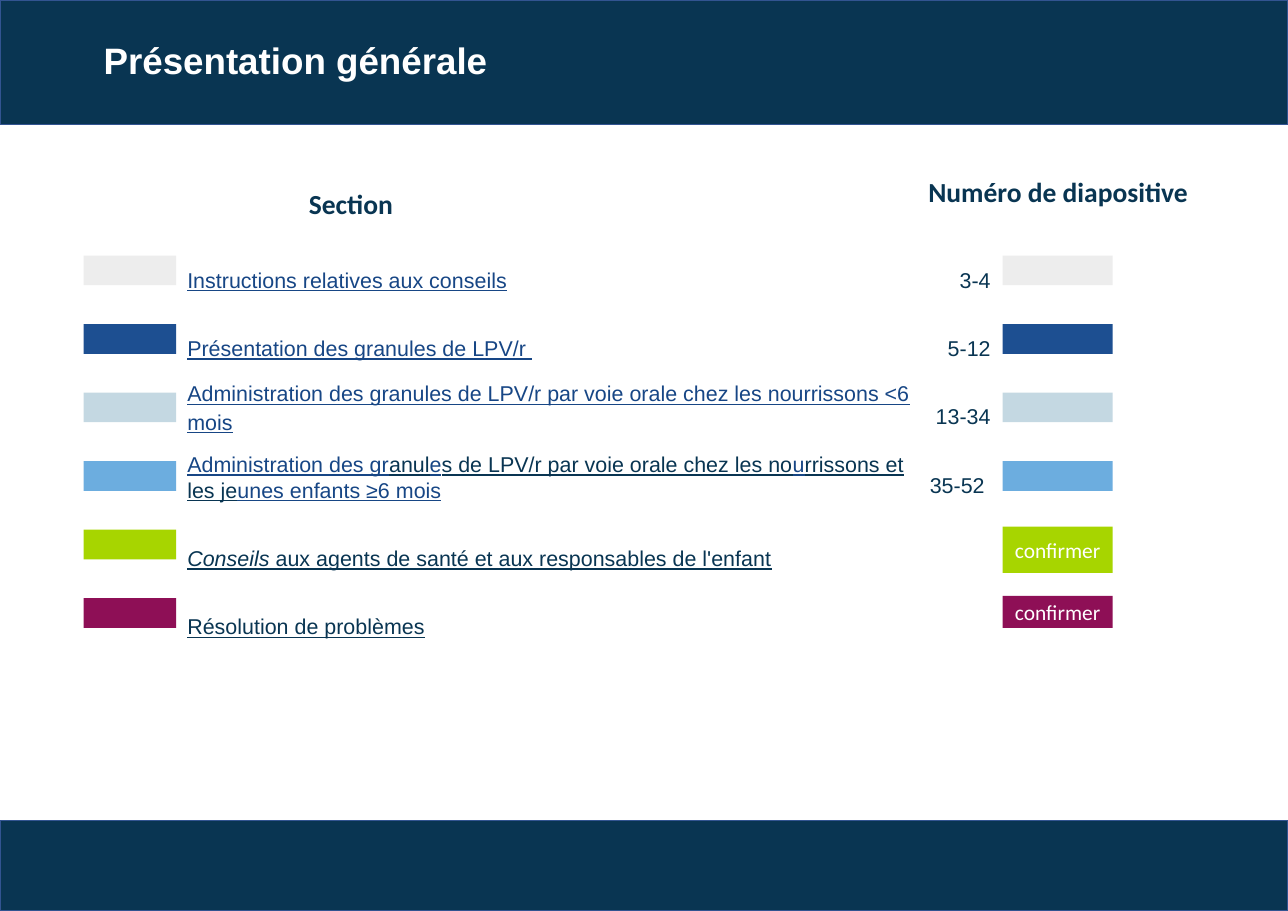
import pptx
import pptx.dml.color
import pptx.enum.shapes
import pptx.enum.text
import pptx.util
import lxml.etree
from pptx.oxml.ns import qn

Pt = pptx.util.Pt
ALIGN = pptx.enum.text.PP_ALIGN
MIDDLE = pptx.enum.text.MSO_ANCHOR.MIDDLE
TOP = pptx.enum.text.MSO_ANCHOR.TOP

WIDE, HIGH = 841.68, 595.44
NAVY, LINK, WHITE = "093552", "174685", "FFFFFF"


def tint(code):
    return pptx.dml.color.RGBColor.from_string(code)


class Deck:
    """Holds the text style and the current slide."""

    def __init__(self):
        self.file = pptx.Presentation()
        self.file.slide_width, self.file.slide_height = Pt(WIDE), Pt(HIGH)
        self.slide = self.file.slides.add_slide(self.file.slide_layouts[1])
        self.face, self.size = "Arial", 14

    def run(self, para, text, color=NAVY, size=None, face=None, **marks):
        part = para.add_run()
        part.text = text
        font = part.font
        font.name, font.size = face or self.face, Pt(size or self.size)
        font.color.rgb = tint(color)
        for mark, value in marks.items():
            setattr(font, mark, value)

    def para(self, frame, index, align=ALIGN.LEFT, space=1.0, before=0):
        para = frame.add_paragraph() if index else frame.paragraphs[0]
        props = para._p.get_or_add_pPr()
        props.set("marL", "0")
        props.set("indent", "0")
        lxml.etree.SubElement(props, qn("a:buNone"))
        para.alignment, para.line_spacing = align, space
        para.space_before = Pt(before if index else 0)
        return para

    def place(self, shape, left, top, width, height, anchor=TOP):
        shape.left, shape.top = Pt(left), Pt(top)
        shape.width, shape.height = Pt(width), Pt(height)
        frame = shape.text_frame
        frame.word_wrap, frame.vertical_anchor = True, anchor
        frame.auto_size = pptx.enum.text.MSO_AUTO_SIZE.NONE
        return frame

    def box(self, left, top, width, height):
        shape = self.slide.shapes.add_textbox(0, 0, 0, 0)
        return self.place(shape, left, top, width, height)

    def rect(self, left, top, width, height, fill, line=None):
        kind = pptx.enum.shapes.MSO_SHAPE.RECTANGLE
        shape = self.slide.shapes.add_shape(kind, Pt(left), Pt(top), Pt(width), Pt(height))
        shape.shadow.inherit = False
        shape.fill.solid()
        shape.fill.fore_color.rgb = tint(fill)
        if line:
            shape.line.color.rgb, shape.line.width = tint(line), Pt(1)
        else:
            shape.line.fill.background()
        return shape

    def band(self, top, height):
        shape = self.rect(0, top, WIDE, height, NAVY, "325491")
        self.slide.shapes.title._element.addprevious(shape._element)

    def head(self, left, top, text):
        para = self.para(self.box(left, top, 228.24, 30.24), 0, ALIGN.CENTER)
        self.run(para, text, size=18, face="Calibri", bold=True)

    def label(self, shape, text):
        shape.text_frame.vertical_anchor = MIDDLE
        para = self.para(shape.text_frame, 0, ALIGN.CENTER)
        self.run(para, text, WHITE, face="Calibri")


# Each section: line spacing and runs (text, colour, italic)
SECTIONS = [
    (2.0, [("Instructions relatives aux conseils", LINK, False)]),
    (2.0, [("Présentation des granules de LPV/r ", LINK, False)]),
    (1.1, [("Administration des granules de LPV/r par voie orale "
            "chez les nourrissons <6 mois", LINK, False)]),
    (1.0, [("Administration des gr", LINK, False), ("anul", NAVY, False),
           ("e", LINK, False),
           ("s de LPV/r par voie orale chez les no", NAVY, False),
           ("u", LINK, False), ("rrissons et les je", NAVY, False),
           ("unes enfants ≥6 mois", LINK, False)]),
    (2.0, [("Conseils", NAVY, True),
           (" aux agents de santé et aux responsables de l'enfant", NAVY, False)]),
    (2.0, [("Résolution de problèmes", NAVY, False)]),
]
PAGES = ["3-4", "5-12", "13-34", "35-52 "]
COLORS = ["EDEDED", "1D4F91", "C4D8E2", "6CADDF", "A7D500", "8E0F56"]
CHECKS = {4: (344.16, 30.24), 5: (389.52, 20.88)}  # row: top, height


def main():
    deck = Deck()

    # Bands and title
    deck.band(0, 81.36)
    deck.band(536.4, 59.04)
    frame = deck.place(deck.slide.shapes.title, 60.48, 0, 723.6, 81.36, MIDDLE)
    deck.run(deck.para(frame, 0, space=0.9), "Présentation générale",
             WHITE, 24, bold=True)

    # Section list
    frame = deck.place(deck.slide.placeholders[1], 115.2, 154.08, 498.24, 289.44)
    for row, (space, runs) in enumerate(SECTIONS):
        para = deck.para(frame, row, space=space, before=11)
        for text, color, slant in runs:
            deck.run(para, text, color, underline=True, italic=slant)

    # Slide numbers
    frame = deck.box(600.48, 154.08, 54, 378)
    for row, text in enumerate(PAGES):
        deck.run(deck.para(frame, row, ALIGN.RIGHT, 2.0, 11), text)

    # Colour keys on both sides
    for row, color in enumerate(COLORS):
        top = 167.04 + 44.78 * row
        deck.rect(54.72, top, 60.48, 19.44, color)
        spot = CHECKS.get(row, (top, 19.44))
        key = deck.rect(655.2, spot[0], 72, spot[1], color)
        if row in CHECKS:
            deck.label(key, "confirmer")

    # Column heads
    deck.head(115.2, 118.8, "Section")
    deck.head(577.44, 110.88, "Numéro de diapositive")

    deck.file.save("out.pptx")


if __name__ == "__main__":
    main()
